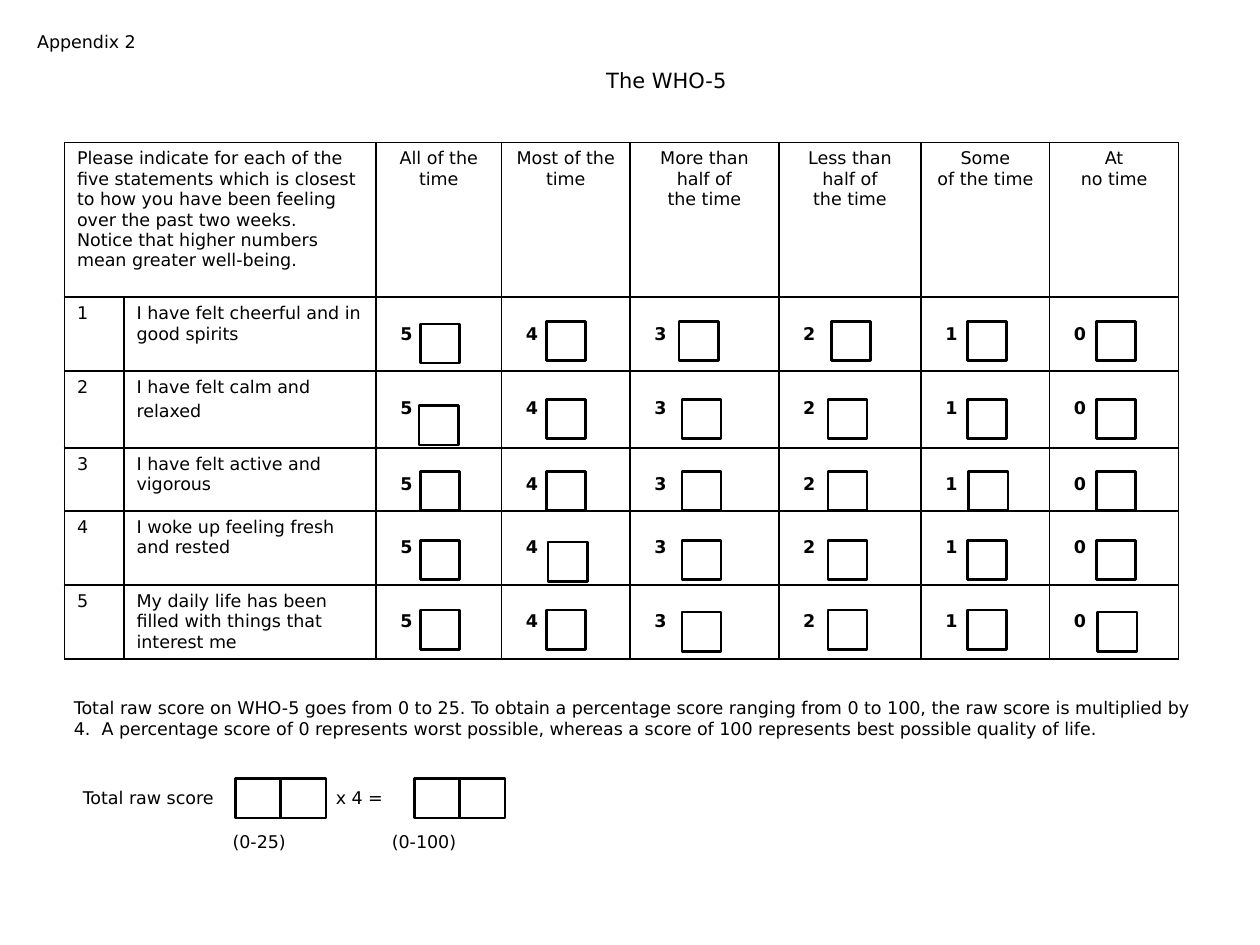
from lxml import etree
from pptx import Presentation
from pptx.dml.color import RGBColor
from pptx.enum.shapes import MSO_SHAPE
from pptx.enum.text import PP_ALIGN
from pptx.oxml.ns import qn
from pptx.util import Cm, Pt

RECT = MSO_SHAPE.RECTANGLE
LEFT, CENTER = PP_ALIGN.LEFT, PP_ALIGN.CENTER
FONT, BLACK = "DejaVu Sans", "000000"

# Content
TITLE = "The WHO-5"
APPENDIX = "Appendix 2"
INTRO = ("Please indicate for each of the five statements which is closest to how you "
         "have been feeling over the past two weeks.\v"
         "Notice that higher numbers mean greater well-being.")
ANSWERS = ["All of the time", "Most of the time", "More than half of\vthe time",
           "Less than half of\vthe time", "Some\vof the time", "At\vno time"]
STATEMENTS = ["I have felt cheerful and in good spirits",
              "I have felt calm and\nrelaxed",
              "I have felt active and vigorous",
              "I woke up feeling fresh and rested",
              "My daily life has been filled with things that interest me"]
SCORES = [5, 4, 3, 2, 1, 0]
NOTE = ("Total raw score on WHO-5 goes from 0 to 25. To obtain a percentage score ranging "
        "from 0 to 100, the raw score is multiplied by 4.  A percentage score of 0 "
        "represents worst possible, whereas a score of 100 represents best possible "
        "quality of life.")
# Total lines: text, tab stops in cm
TOTALS = [("Total raw score\tx 4 =", [5.1]),
          ("\t(0-25)\t(0-100)", [3.02, 6.23])]

# Layout in cm
COLS = [1.2, 5.08, 2.53, 2.59, 3.0, 2.87, 2.59, 2.6]
ROWS = [3.12, 1.49, 1.55, 1.27, 1.49, 1.49]
BOX = 0.79
BOX_LEFTS = [8.48, 11.02, 13.75, 16.69, 19.5, 22.1]
BOX_TOPS = [6.48, 8.05, 9.5, 10.9, 12.3]
# Boxes set off the grid: (row, column) -> (dx, dy)
NUDGES = {(0, 0): (0, 0.05), (1, 0): (-0.03, 0.13), (0, 2): (-0.06, 0),
          (0, 3): (0.07, 0), (2, 4): (0.03, 0), (3, 1): (0.03, 0.03),
          (4, 2): (0, 0.04), (4, 5): (0.03, 0.04)}
TOTAL_LEFTS = [4.75, 8.36]
TOTAL_TOP, TOTAL_WIDTH = 15.7, 0.91


def rgb(value):
    return RGBColor.from_string(value)


def style(p, size=10, bold=False, align=LEFT):
    p.alignment = align
    p.font.name, p.font.size, p.font.bold = FONT, Pt(size), bold
    p.font.color.rgb = rgb(BLACK)


def write(tf, text, **kw):
    for i, line in enumerate(text.split("\n")):
        p = tf.add_paragraph() if i else tf.paragraphs[0]
        p.text = line
        style(p, **kw)


def text_box(s, x, y, w, h):
    tf = s.shapes.add_textbox(Cm(x), Cm(y), Cm(w), Cm(h)).text_frame
    tf.word_wrap = True
    return tf


def box(s, x, y, w):
    sp = s.shapes.add_shape(RECT, Cm(x), Cm(y), Cm(w), Cm(BOX))
    sp.shadow.inherit = False
    sp.fill.background()
    sp.line.color.rgb, sp.line.width = rgb(BLACK), Pt(1.5)


def frame_cell(cell):
    tc_pr = cell._tc.get_or_add_tcPr()
    for side in ("a:lnL", "a:lnR", "a:lnT", "a:lnB"):
        ln = etree.SubElement(tc_pr, qn(side), w=str(Pt(1)))
        fill = etree.SubElement(ln, qn("a:solidFill"))
        etree.SubElement(fill, qn("a:srgbClr"), val=BLACK)
    cell.fill.background()


def add_tabs(p, stops):
    tabs = etree.SubElement(p._p.get_or_add_pPr(), qn("a:tabLst"))
    for stop in stops:
        etree.SubElement(tabs, qn("a:tab"), pos=str(Cm(stop)), algn="l")


def main():
    prs = Presentation()
    prs.slide_width, prs.slide_height = Cm(25.4), Cm(19.05)
    s = prs.slides.add_slide(prs.slide_layouts[6])

    # Questionnaire table
    table = s.shapes.add_table(len(ROWS), len(COLS), Cm(1.3), Cm(2.87),
                               Cm(sum(COLS)), Cm(sum(ROWS))).table
    table.first_row = table.horz_banding = False
    for col, w in zip(table.columns, COLS):
        col.width = Cm(w)
    for row, h in zip(table.rows, ROWS):
        row.height = Cm(h)
    for cell in table.iter_cells():
        frame_cell(cell)
    table.cell(0, 0).merge(table.cell(0, 1))
    write(table.cell(0, 0).text_frame, INTRO)
    for c, answer in enumerate(ANSWERS, 2):
        write(table.cell(0, c).text_frame, answer, align=CENTER)
    for r, statement in enumerate(STATEMENTS, 1):
        write(table.cell(r, 0).text_frame, str(r))
        tf = table.cell(r, 1).text_frame
        write(tf, statement)
        for p in tf.paragraphs[1:]:
            p.space_before = Pt(2)
        for c, score in enumerate(SCORES, 2):
            cell = table.cell(r, c)
            cell.margin_left, cell.margin_top = Cm(0.49), Cm(0.54)
            write(cell.text_frame, str(score), bold=True)

    # Answer boxes
    for r, y in enumerate(BOX_TOPS):
        for c, x in enumerate(BOX_LEFTS):
            dx, dy = NUDGES.get((r, c), (0, 0))
            box(s, x + dx, y + dy, BOX)

    # Headings and note
    write(text_box(s, 7.34, 1.24, 12.19, 0.77), TITLE, size=12, align=CENTER)
    write(text_box(s, 0.5, 0.5, 2.8, 0.68), APPENDIX)
    write(text_box(s, 1.24, 13.92, 23.01, 1.12), NOTE)

    # Total score
    tf = text_box(s, 1.42, 15.32, 22.6, 1.95)
    tf.margin_top = Cm(0.54)
    for i, (text, stops) in enumerate(TOTALS):
        p = tf.add_paragraph() if i else tf.paragraphs[0]
        p.text = text
        add_tabs(p, stops)
        style(p)
        p.space_before = Pt(13 * i)
    for x in TOTAL_LEFTS:
        for i in range(2):
            box(s, x + i * TOTAL_WIDTH, TOTAL_TOP, TOTAL_WIDTH)

    prs.save("out.pptx")


if __name__ == "__main__":
    main()
